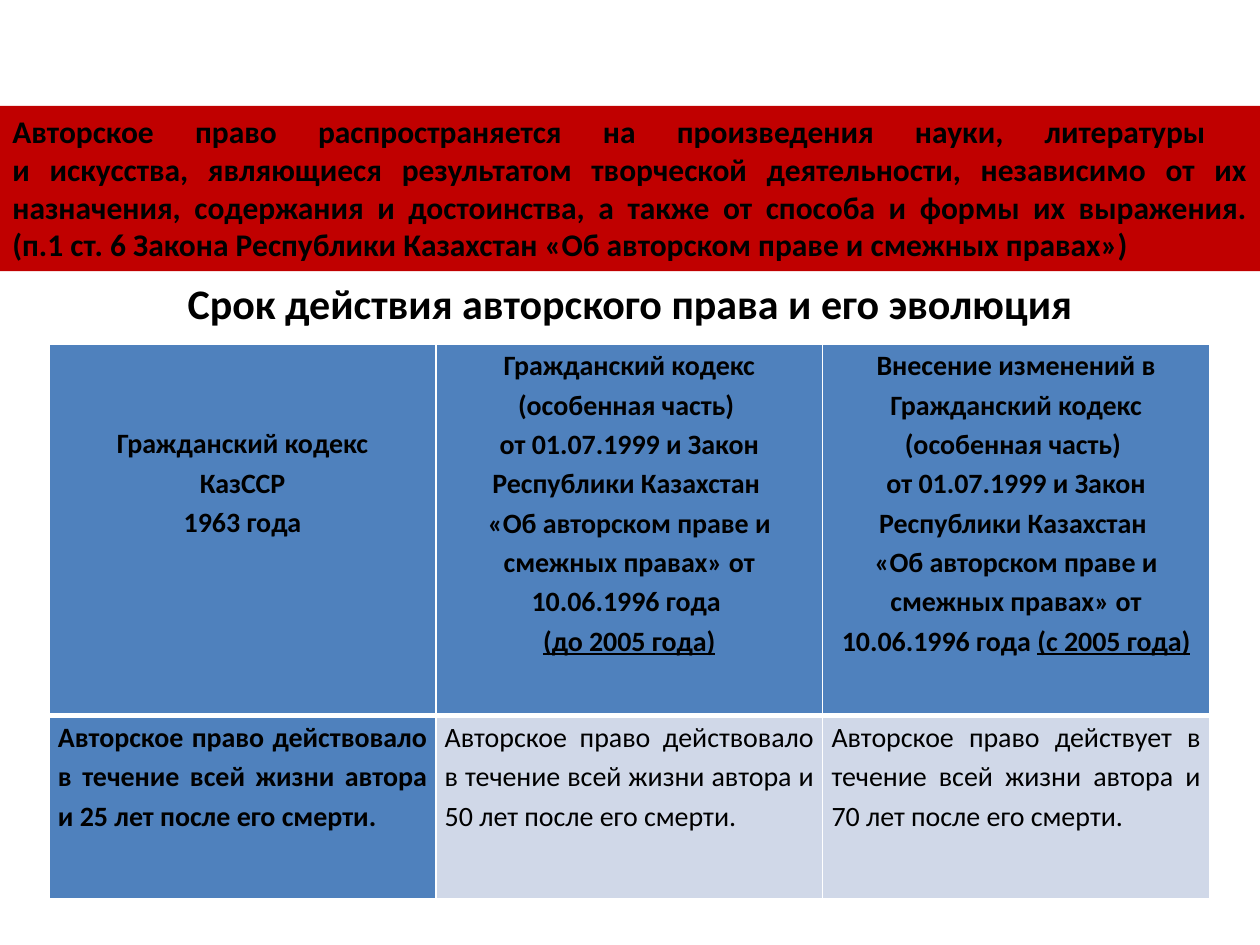
from lxml.etree import SubElement
from pptx import Presentation
from pptx.dml.color import RGBColor
from pptx.enum.shapes import MSO_SHAPE
from pptx.enum.text import MSO_ANCHOR, PP_ALIGN
from pptx.oxml.ns import qn
from pptx.util import Inches, Pt

WIDTH, HEIGHT = Inches(10), Inches(7.5)
COLORS = {"band": "C00000", "head": "4F81BD", "body": "D0D8E8", "text": "000000", "rule": "FFFFFF"}
BAND_FORMAT = {"name": "Calibri", "size": Pt(18), "bold": True}
TITLE_FORMAT = {"name": "Calibri", "size": Pt(24), "bold": True}
HEAD_FORMAT = {"name": "Calibri", "size": Pt(16), "bold": True}
BODY_FORMAT = {**HEAD_FORMAT, "bold": False}

BAND_LINES = [
    "Авторское право распространяется на произведения науки, литературы ",
    "и искусства, являющиеся результатом творческой деятельности, независимо от их "
    "назначения, содержания и достоинства, а также от способа и формы их выражения.",
    "(п.1 ст. 6 Закона Республики Казахстан «Об авторском праве и смежных правах»)",
]
TITLE = "Срок действия авторского права и его эволюция"
CODE = "Гражданский кодекс"
LAW = "от 01.07.1999 и Закон Республики Казахстан "
RIGHTS = "«Об авторском праве и смежных правах» от 10.06.1996 года "
HEADERS = [
    [[CODE], ["КазССР"], ["1963 года"]],
    [[f"{CODE} (особенная часть) "], [LAW], [RIGHTS], ["", "(до 2005 года)"]],
    [[f"Внесение изменений в {CODE} (особенная часть) "], [LAW], [RIGHTS, "(с 2005 года)"]],
]
TERMS = [("действовало", 25), ("действовало", 50), ("действует", 70)]


def add_span(para, text, style):
    """Add one formatted span to a paragraph."""
    span = para.add_run()
    span.text = text
    for name, value in style.items():
        setattr(span.font, name, value)
    span.font.color.rgb = RGBColor.from_string(COLORS["text"])


def add_band(page, box):
    """Place the coloured statement of the law across the given box."""
    band = page.shapes.add_shape(MSO_SHAPE.RECTANGLE, *box)
    band.shadow.inherit = False
    band.fill.solid()
    band.fill.fore_color.rgb = RGBColor.from_string(COLORS["band"])
    band.line.fill.background()
    band.text_frame.word_wrap = True
    band.text_frame.vertical_anchor = MSO_ANCHOR.TOP
    para = band.text_frame.paragraphs[0]
    para.alignment = PP_ALIGN.JUSTIFY
    for index, line in enumerate(BAND_LINES):
        if index:
            para.add_line_break()
        add_span(para, line, BAND_FORMAT)


def add_title(page, box):
    """Place the centred heading in the given box."""
    frame = page.shapes.add_textbox(*box).text_frame
    frame.word_wrap = True
    para = frame.paragraphs[0]
    para.alignment = PP_ALIGN.CENTER
    add_span(para, TITLE, TITLE_FORMAT)


def add_borders(cell, widths):
    """Draw the cell borders with the given widths in points by side."""
    properties = cell._tc.get_or_add_tcPr()
    for side, width in widths.items():
        line = SubElement(properties, qn(f"a:ln{side}"), w=str(Pt(width)))
        fill = SubElement(line, qn("a:solidFill"))
        SubElement(fill, qn("a:srgbClr"), val=COLORS["rule"])


def fill_cell(cell, paragraphs, style, alignment, color, widths, top=0):
    """Write and format one table cell; second spans are underlined."""
    margins = {"margin_left": 0.07, "margin_right": 0.07, "margin_top": top, "margin_bottom": 0}
    for name, value in margins.items():
        setattr(cell, name, Inches(value))
    add_borders(cell, widths)
    cell.fill.solid()
    cell.fill.fore_color.rgb = RGBColor.from_string(COLORS[color])
    frame = cell.text_frame
    for index, spans in enumerate(paragraphs):
        para = frame.add_paragraph() if index else frame.paragraphs[0]
        para.alignment = alignment
        para.line_spacing = 1.15
        for underline, text in enumerate(spans):
            if text:
                add_span(para, text, {**style, "underline": bool(underline)})


def add_terms_table(page, box):
    """Place the comparison of copyright terms in the given box."""
    left, top, width, height = box
    table = page.shapes.add_table(2, len(TERMS), left, top, width, height).table
    for row, share in zip(table.rows, (0.67, 0.33)):
        row.height = int(height * share)
    for column, (header, (verb, years)) in enumerate(zip(HEADERS, TERMS)):
        table.columns[column].width = width // len(TERMS)
        first = column == 0
        fill_cell(table.cell(0, column), header, HEAD_FORMAT, PP_ALIGN.CENTER, "head",
                  {"L": 1, "R": 1, "T": 1, "B": 3}, top=0.62 if first else 0)
        term = f"Авторское право {verb} в течение всей жизни автора и {years} лет после его смерти."
        fill_cell(table.cell(1, column), [[term]], HEAD_FORMAT if first else BODY_FORMAT,
                  PP_ALIGN.JUSTIFY, "head" if first else "body",
                  {"L": 1, "R": 1, "T": 3, "B": 1})


def share_box(left, top, width, height):
    """Turn shares of the slide into a box of lengths."""
    return int(WIDTH * left), int(HEIGHT * top), int(WIDTH * width), int(HEIGHT * height)


def main():
    """Build and save the slide."""
    deck = Presentation()
    deck.slide_width, deck.slide_height = WIDTH, HEIGHT
    page = deck.slides.add_slide(deck.slide_layouts[6])
    add_title(page, share_box(0, 0.287, 1, 0.075))
    add_band(page, share_box(0, 0.112, 1, 0.175))
    add_terms_table(page, share_box(0.039, 0.364, 0.921, 0.587))
    deck.save("out.pptx")


if __name__ == "__main__":
    main()
